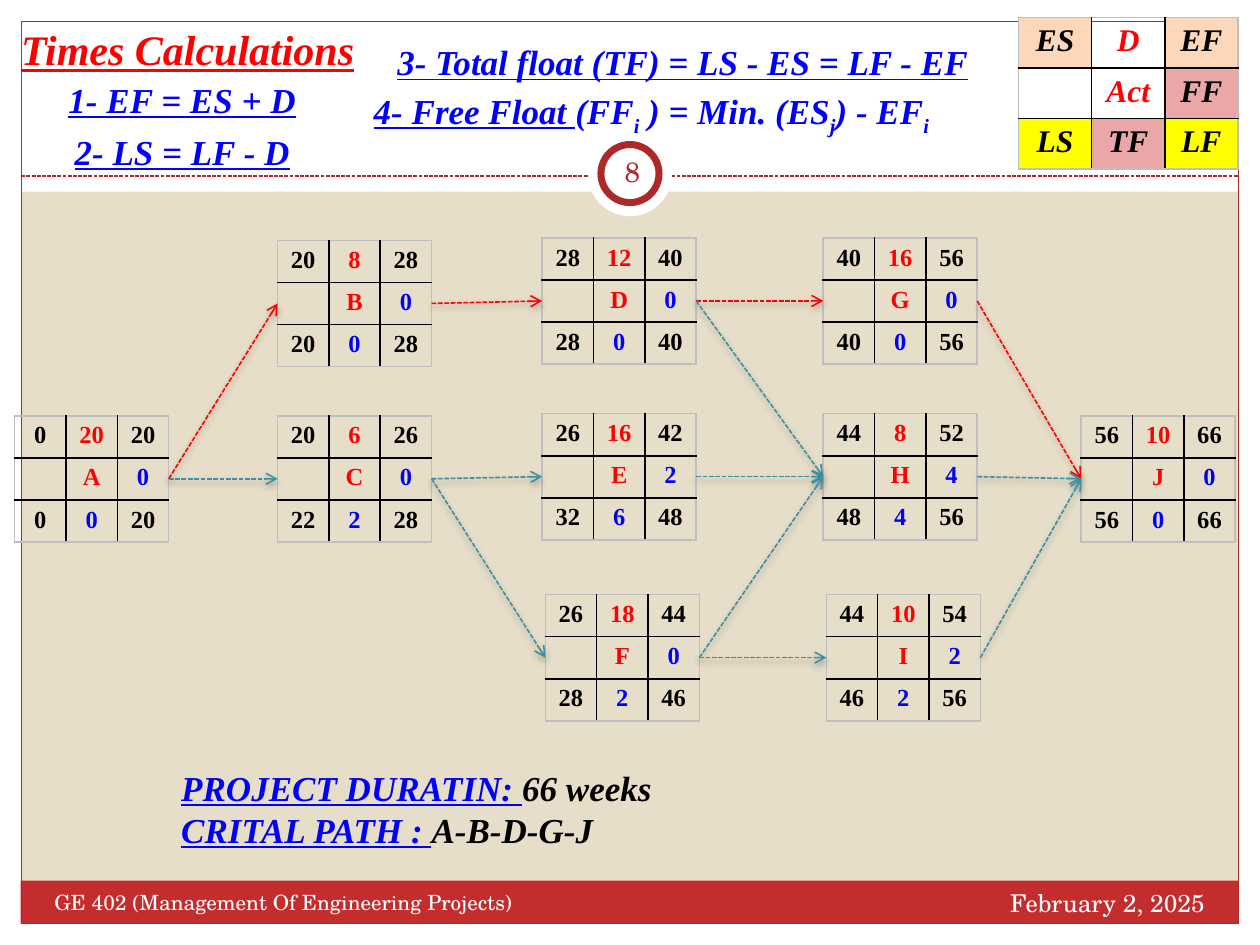
import dataclasses
import typing

import pptx
import pptx.dml.color
import pptx.enum.dml
import pptx.enum.shapes
import pptx.enum.text
import pptx.oxml
import pptx.oxml.ns
import pptx.util

Pt = pptx.util.Pt
SHAPE = pptx.enum.shapes.MSO_SHAPE
ALIGN = pptx.enum.text.PP_ALIGN
ANCHOR = pptx.enum.text.MSO_ANCHOR
SERIF, SCHOOL = "Times New Roman", "TeX Gyre Schola"
COLORS = {
    "sand": "E7DEC9", "white": "FFFFFF", "black": "000000", "red": "FF0000",
    "blue": "0000FF", "teal": "3891A7", "band": "C32D2E", "trim": "AC2829",
    "peach": "FDD7BA", "pink": "EBA7A8", "yellow": "FFFF00", "grey": "BFBFBF",
}
SHADOW = (
    '<a:outerShdw blurRad="50800" dist="25400" dir="5400000" rotWithShape="0">'
    '<a:srgbClr val="000000"><a:alpha val="35000"/></a:srgbClr></a:outerShdw>'
)
CELL_COLORS = (("black", "red", "black"), ("black", "red", "blue"), ("black", "blue", "black"))


@dataclasses.dataclass
class Activity:
    name: str
    x: float
    y: float
    es: int
    d: int
    ls: int
    ff: int

    def rows(self) -> tuple:
        return (
            (self.es, self.d, self.es + self.d),
            ("", self.name, self.ff),
            (self.ls, self.ls - self.es, self.ls + self.d),
        )


ACTIVITIES = (
    Activity("A", 8.4, 237.6, 0, 20, 0, 0),
    Activity("B", 158.6, 137.4, 20, 8, 20, 0),
    Activity("C", 158.6, 237.6, 20, 6, 22, 0),
    Activity("D", 309.8, 136, 28, 12, 28, 0),
    Activity("E", 309.8, 236.4, 26, 16, 32, 2),
    Activity("F", 311.6, 339.8, 26, 18, 28, 0),
    Activity("G", 470.4, 136, 40, 16, 40, 0),
    Activity("H", 470.4, 236.4, 44, 8, 48, 4),
    Activity("I", 472.2, 339.8, 44, 10, 46, 2),
    Activity("J", 617.8, 237.6, 56, 10, 56, 0),
)
LINKS = ("AB", "AC", "BD", "CE", "CF", "DG", "DH", "EH", "FH", "FI", "GJ", "HJ", "IJ")
LEGEND = (("ES", "D", "EF"), ("", "Act", "FF"), ("LS", "TF", "LF"))
LEGEND_COLORS = (("black", "red", "black"),) * 2 + (("black",) * 3,)
LEGEND_FILLS = (("peach", None, "peach"), (None, None, "pink"), ("yellow", "pink", "yellow"))


def rgb(name: str) -> pptx.dml.color.RGBColor:
    """Look up a named colour."""
    return pptx.dml.color.RGBColor.from_string(COLORS[name])


def xml(tag: str, attrs: str = "", inner: str = "") -> typing.Any:
    """Build a DrawingML element."""
    ns = pptx.oxml.ns.nsdecls("a")
    return pptx.oxml.parse_xml(f"<a:{tag} {ns} {attrs}>{inner}</a:{tag}>")


def add_run(p, text: str, size: float = 20, color: str = "blue", font: str = SERIF,
            bold: bool = True, italic: bool = True, underline: bool = True,
            baseline: int = 0) -> None:
    """Append formatted text to a paragraph."""
    r = p.add_run()
    r.text = text
    r.font.size, r.font.name = Pt(size), font
    r.font.bold, r.font.italic, r.font.underline = bold, italic, underline
    r.font.color.rgb = rgb(color)
    if baseline:
        r.font._element.set("baseline", str(baseline * 1000))


def add_box(s, x: float, y: float, w: float, h: float, wrap: bool = True):
    """Add an empty text box and return its text frame."""
    tf = s.shapes.add_textbox(Pt(x), Pt(y), Pt(w), Pt(h)).text_frame
    tf.word_wrap = wrap
    return tf


def add_shape(s, kind, x: float, y: float, w: float, h: float,
              fill: typing.Optional[str] = None, line: float = 0) -> None:
    """Add a plain shape with an optional fill and trim outline."""
    sp = s.shapes.add_shape(kind, Pt(x), Pt(y), Pt(w), Pt(h))
    sp.shadow.inherit = False
    if fill:
        sp.fill.solid()
        sp.fill.fore_color.rgb = rgb(fill)
    else:
        sp.fill.background()
    if line:
        sp.line.width = Pt(line)
        sp.line.color.rgb = rgb("trim")
    else:
        sp.line.fill.background()


def add_line(s, x1: float, y1: float, x2: float, y2: float, color: str,
             width: float, effect: str = ""):
    """Add a dashed straight connector."""
    c = s.shapes.add_connector(pptx.enum.shapes.MSO_CONNECTOR.STRAIGHT,
                               Pt(x1), Pt(y1), Pt(x2), Pt(y2))
    c.line.width = Pt(width)
    c.line.color.rgb = rgb(color)
    c.line.dash_style = pptx.enum.dml.MSO_LINE.SQUARE_DOT
    c._element.spPr.append(xml("effectLst", inner=effect))
    return c


def add_grid(s, x: float, y: float, col: float, row: float, values: tuple,
             colors: tuple, fills: tuple, size: float, italic: bool):
    """Add a three by three table with black inner and grey outer borders."""
    frame = s.shapes.add_table(3, 3, Pt(x), Pt(y), Pt(3 * col), Pt(3 * row))
    table = frame.table
    table.first_row = table.horz_banding = False
    for i in range(3):
        table.columns[i].width, table.rows[i].height = Pt(col), Pt(row)
        for j in range(3):
            cell = table.cell(i, j)
            outer = {"lnL": j == 0, "lnR": j == 2, "lnT": i == 0, "lnB": i == 2}
            for tag, is_outer in outer.items():
                line = COLORS["grey" if is_outer else "black"]
                cell._tc.get_or_add_tcPr().append(xml(
                    tag, 'w="12700"',
                    f'<a:solidFill><a:srgbClr val="{line}"/></a:solidFill>'))
            if fills[i][j]:
                cell.fill.solid()
                cell.fill.fore_color.rgb = rgb(fills[i][j])
            else:
                cell.fill.background()
            p = cell.text_frame.paragraphs[0]
            p.alignment = ALIGN.CENTER
            if values[i][j] == "":
                p._p.append(xml("endParaRPr", f'sz="{size * 100}"'))
            else:
                add_run(p, str(values[i][j]), size=size, color=colors[i][j],
                        italic=italic, underline=False)
    return frame


def draw_frame(s) -> None:
    """Draw the margins, footer band, border, divider and slide number."""
    for box in ((0, 527.8, 720, 12.2), (0, 0, 720, 109.6),
                (0, 0, 12.2, 540), (707.8, 0, 12.2, 540)):
        add_shape(s, SHAPE.RECTANGLE, *box, fill="white")
    add_shape(s, SHAPE.RECTANGLE, 11.8, 503.2, 695.6, 24.4, fill="band")
    add_shape(s, SHAPE.RECTANGLE, 12.2, 12.2, 695.6, 515.6, line=0.75)
    add_line(s, 12.2, 100.6, 707.8, 100.6, "trim", 0.75)
    add_shape(s, SHAPE.OVAL, 336, 75.6, 48, 48, fill="white")
    add_shape(s, SHAPE.OVAL, 343.4, 82.6, 33.2, 33.2, fill="white", line=4)
    plain = dict(font=SCHOOL, bold=False, italic=False, underline=False)
    p = add_box(s, 456, 504, 239.6, 28.8).paragraphs[0]
    p.alignment = ALIGN.RIGHT
    add_run(p, "February 2, 2025", size=14, color="white", **plain)
    p = add_box(s, 24, 504.6, 282, 28.8).paragraphs[0]
    add_run(p, "GE 402 (Management Of Engineering Projects)", size=12, color="white", **plain)
    tf = add_box(s, 343.4, 80.8, 36, 34.4)
    tf.margin_left = tf.margin_right = Pt(3.6)
    tf.vertical_anchor = ANCHOR.MIDDLE
    tf.paragraphs[0].alignment = ALIGN.CENTER
    add_run(tf.paragraphs[0], "8", size=16, color="trim", **plain)


def draw_network(s) -> None:
    """Draw the activity tables and the arrows that join them."""
    fills = ((None, "sand", None),) * 3
    frames = {a.name: add_grid(s, a.x, a.y, 29.35, 24, a.rows(), CELL_COLORS, fills, 14, False)
              for a in ACTIVITIES}
    critical = {a.name for a in ACTIVITIES if a.ls == a.es}
    for start, end in LINKS:
        color = "red" if {start, end} <= critical else "teal"
        c = add_line(s, 0, 0, 0, 0, color, 0.9, SHADOW)
        c.begin_connect(frames[start], 3)
        c.end_connect(frames[end], 1)
        c.line._get_or_add_ln().append(xml("tailEnd", 'type="arrow"'))


def draw_texts(s) -> None:
    """Write the title, the formulas and the project results."""
    p = add_box(s, 5, 10.1, 232.6, 36).paragraphs[0]
    add_run(p, "Times Calculations", size=24, color="red")
    for text, x, y, w, wrap in (
        ("1- EF = ES + D", 31, 31.7, 146.2, False),
        ("2- LS = LF - D", 34.6, 61.2, 139, False),
        ("3- Total float (TF) = LS - ES = LF - EF", 210.2, 10.1, 360, True),
    ):
        p = add_box(s, x, y, w, 37.4, wrap).paragraphs[0]
        p.alignment, p.line_spacing = ALIGN.CENTER, 1.4
        add_run(p, text)
    p = add_box(s, 195.8, 47.5, 352.8, 31.7).paragraphs[0]
    p.alignment = ALIGN.CENTER
    add_run(p, "4- Free Float ")
    for text, base in (("(FF", 0), ("i", -25), (" ) = Min. (ES", 0),
                       ("j", -25), (") - EF", 0), ("i", -25)):
        add_run(p, text, underline=False, baseline=base)
    tf = add_box(s, 96.5, 434.2, 444.2, 55.4)
    results = (("PROJECT DURATIN: ", "66 weeks"), ("CRITAL PATH : ", "A-B-D-G-J"))
    for i, (label, value) in enumerate(results):
        p = tf.add_paragraph() if i else tf.paragraphs[0]
        add_run(p, label)
        add_run(p, value, color="black", underline=False)


def main() -> None:
    """Build the slide and save it."""
    prs = pptx.Presentation()
    prs.slide_width, prs.slide_height = Pt(720), Pt(540)
    s = prs.slides.add_slide(prs.slide_layouts[6])
    s.background.fill.solid()
    s.background.fill.fore_color.rgb = rgb("sand")
    draw_frame(s)
    draw_network(s)
    add_grid(s, 582, 10, 41.8, 28.8, LEGEND, LEGEND_COLORS, LEGEND_FILLS, 18, True)
    draw_texts(s)
    prs.save("out.pptx")


if __name__ == "__main__":
    main()
